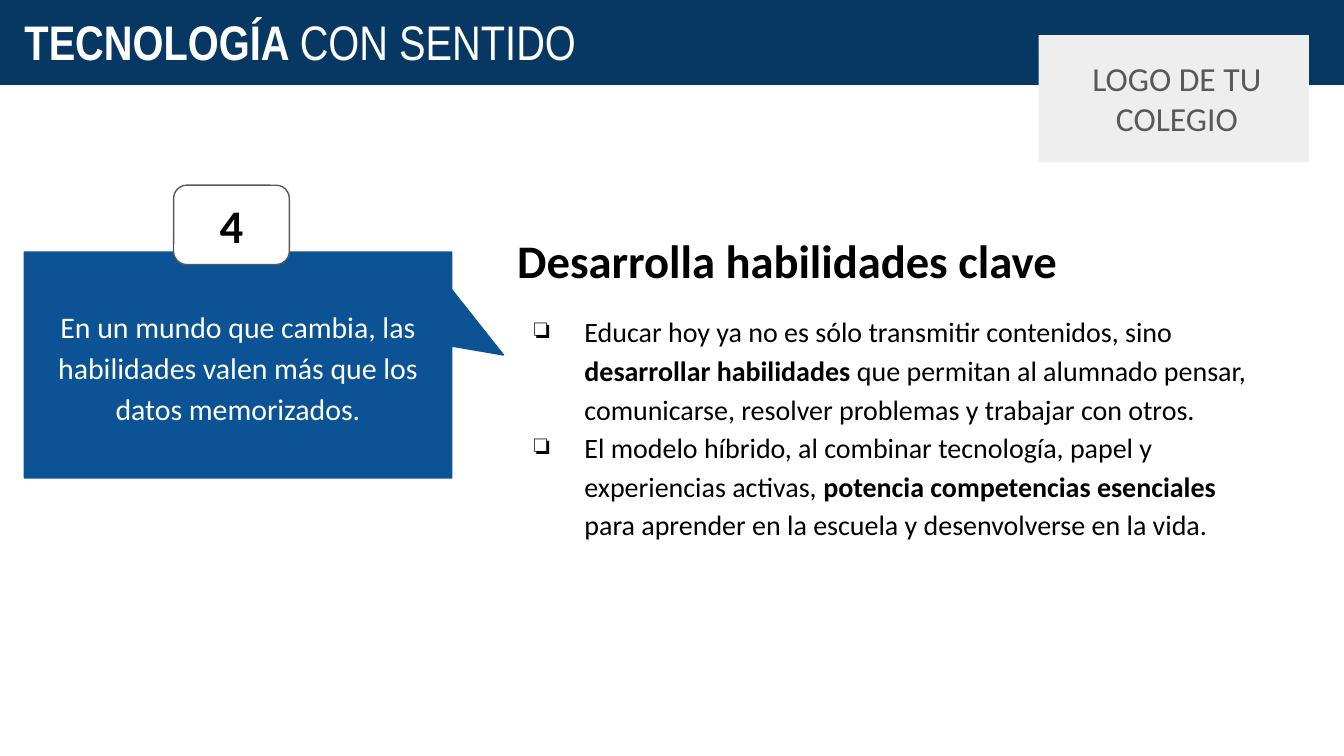
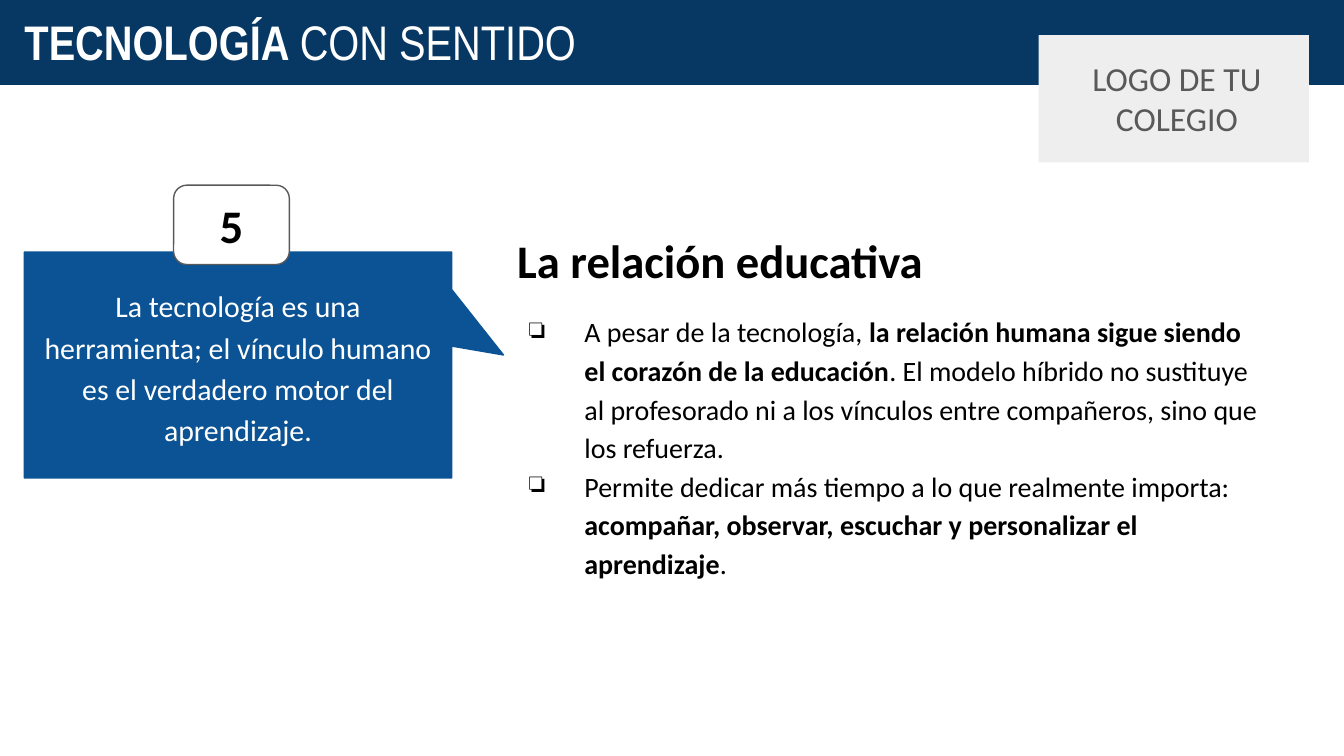
from lxml import etree
from pptx import Presentation
from pptx.dml.color import RGBColor
from pptx.enum.shapes import MSO_SHAPE
from pptx.enum.text import MSO_ANCHOR, MSO_AUTO_SIZE, PP_ALIGN
from pptx.oxml.ns import qn
from pptx.util import Pt

RECT = MSO_SHAPE.RECTANGLE
ROUND = MSO_SHAPE.ROUNDED_RECTANGLE
CALLOUT = MSO_SHAPE.ROUNDED_RECTANGULAR_CALLOUT
TOP, MIDDLE, BOTTOM = MSO_ANCHOR.TOP, MSO_ANCHOR.MIDDLE, MSO_ANCHOR.BOTTOM
LEFT, CENTER = PP_ALIGN.LEFT, PP_ALIGN.CENTER
FIXED = MSO_AUTO_SIZE.NONE

NAVY = RGBColor(0x07, 0x37, 0x63)
BLUE = RGBColor(0x0B, 0x53, 0x94)
GRAY = RGBColor(0x59, 0x59, 0x59)
PALE = RGBColor(0xEE, 0xEE, 0xEE)
WHITE = RGBColor(0xFF, 0xFF, 0xFF)
BLACK = RGBColor(0, 0, 0)

BODY = "Calibri"
HEAD = "Arial Narrow"
INSET = 7.2

TOPICS = [
    {
        "number": "4",
        "quote": "En un mundo que cambia, las habilidades valen más que los "
                 "datos memorizados.",
        "heading": "Desarrolla habilidades clave",
        "hang": 27,
        "points": [
            [("Educar hoy ya no es sólo transmitir contenidos, sino ", False),
             ("desarrollar habilidades", True),
             (" que permitan al alumnado pensar, comunicarse, resolver "
              "problemas y trabajar con otros.", False)],
            [("El modelo híbrido, al combinar tecnología, papel y "
              "experiencias activas, ", False),
             ("potencia competencias esenciales ", True),
             ("para aprender en la escuela y desenvolverse en la vida.", False)],
        ],
    },
    {
        "number": "5",
        "quote": "La tecnología es una herramienta; el vínculo humano es el "
                 "verdadero motor del aprendizaje.",
        "heading": "La relación educativa",
        "hang": 29.5,
        "points": [
            [("A pesar de la tecnología, ", False),
             ("la relación humana sigue siendo el corazón de la educación", True),
             (". El modelo híbrido no sustituye al profesorado ni a los "
              "vínculos entre compañeros, sino que los refuerza.", False)],
            [("Permite dedicar más tiempo a lo que realmente importa: ", False),
             ("acompañar, observar, escuchar y personalizar el aprendizaje", True),
             (".", False)],
        ],
    },
]


def set_frame(shape, anchor, left=INSET):
    frame = shape.text_frame
    frame.word_wrap = True
    frame.auto_size = FIXED
    frame.vertical_anchor = anchor
    frame.margin_left = Pt(left)
    frame.margin_top = frame.margin_right = frame.margin_bottom = Pt(INSET)
    return frame


def add_runs(para, runs, size, color, font=BODY, align=LEFT, space=1, before=0):
    para.alignment = align
    para.line_spacing = space
    para.space_before = Pt(before)
    for text, bold in runs:
        run = para.add_run()
        run.text = text
        run.font.name = font
        run.font.size = Pt(size)
        run.font.bold = bold
        run.font.color.rgb = color


def add_bullet(para, hang):
    props = para._p.get_or_add_pPr()
    props.set("marL", str(Pt(36)))
    props.set("indent", str(-Pt(hang)))
    tint = etree.SubElement(props, qn("a:buClr"))
    etree.SubElement(tint, qn("a:srgbClr")).set("val", str(BLACK))
    etree.SubElement(props, qn("a:buChar")).set("char", "❏")


def paint(shape, fill, line=None, width=0.75):
    shape.fill.solid()
    shape.fill.fore_color.rgb = fill
    if line is None:
        shape.line.fill.background()
    else:
        shape.line.color.rgb = line
        shape.line.width = Pt(width)


def add_box(slide, kind, box, fill, line=None, adjust=()):
    shape = slide.shapes.add_shape(kind, *map(Pt, box))
    shape.shadow.inherit = False
    paint(shape, fill, line)
    for index, value in enumerate(adjust):
        shape.adjustments[index] = value
    return shape


def add_text(slide, box):
    return set_frame(slide.shapes.add_textbox(*map(Pt, box)), TOP)


def add_title(slide):
    title = slide.shapes.title
    title.left, title.top, title.width, title.height = map(Pt, (0, 0, 720, 45))
    paint(title, NAVY, NAVY, 1.5)
    frame = set_frame(title, BOTTOM, 13.1)
    add_runs(frame.paragraphs[0], [("TECNOLOGÍA ", True), ("CON SENTIDO", False)],
             26, WHITE, HEAD)


def add_logo(slide):
    add_box(slide, RECT, (556.4, 18.9, 144.8, 68.1), PALE)
    frame = add_text(slide, (560, 23.6, 141, 57.6))
    add_runs(frame.paragraphs[0], [("LOGO DE TU COLEGIO", False)], 18, GRAY,
             align=CENTER)


def add_quote(slide, quote, number):
    bubble = add_box(slide, CALLOUT, (13, 135, 229, 121), BLUE, BLUE,
                     (0.621, -0.044, 0))
    add_runs(set_frame(bubble, MIDDLE).paragraphs[0], [(quote, False)], 16, WHITE,
             align=CENTER, space=1.15, before=8)
    badge = add_box(slide, ROUND, (93, 99.2, 62, 42.5), WHITE, GRAY)
    add_runs(set_frame(badge, MIDDLE).paragraphs[0], [(number, True)], 25, BLACK,
             align=CENTER)


def add_points(slide, heading, points, hang):
    frame = add_text(slide, (270, 112.3, 416.2, 285))
    add_runs(frame.paragraphs[0], [(heading, True)], 25, BLACK,
             space=1.15, before=14)
    for index, runs in enumerate(points):
        para = frame.add_paragraph()
        add_runs(para, runs, 15, BLACK, space=1.15, before=0 if index else 12)
        add_bullet(para, hang)


def main():
    deck = Presentation()
    deck.slide_width, deck.slide_height = Pt(720), Pt(405)
    for topic in TOPICS:
        slide = deck.slides.add_slide(deck.slide_layouts[5])
        add_title(slide)
        add_points(slide, topic["heading"], topic["points"], topic["hang"])
        add_quote(slide, topic["quote"], topic["number"])
        add_logo(slide)
    deck.save("out.pptx")


if __name__ == "__main__":
    main()
